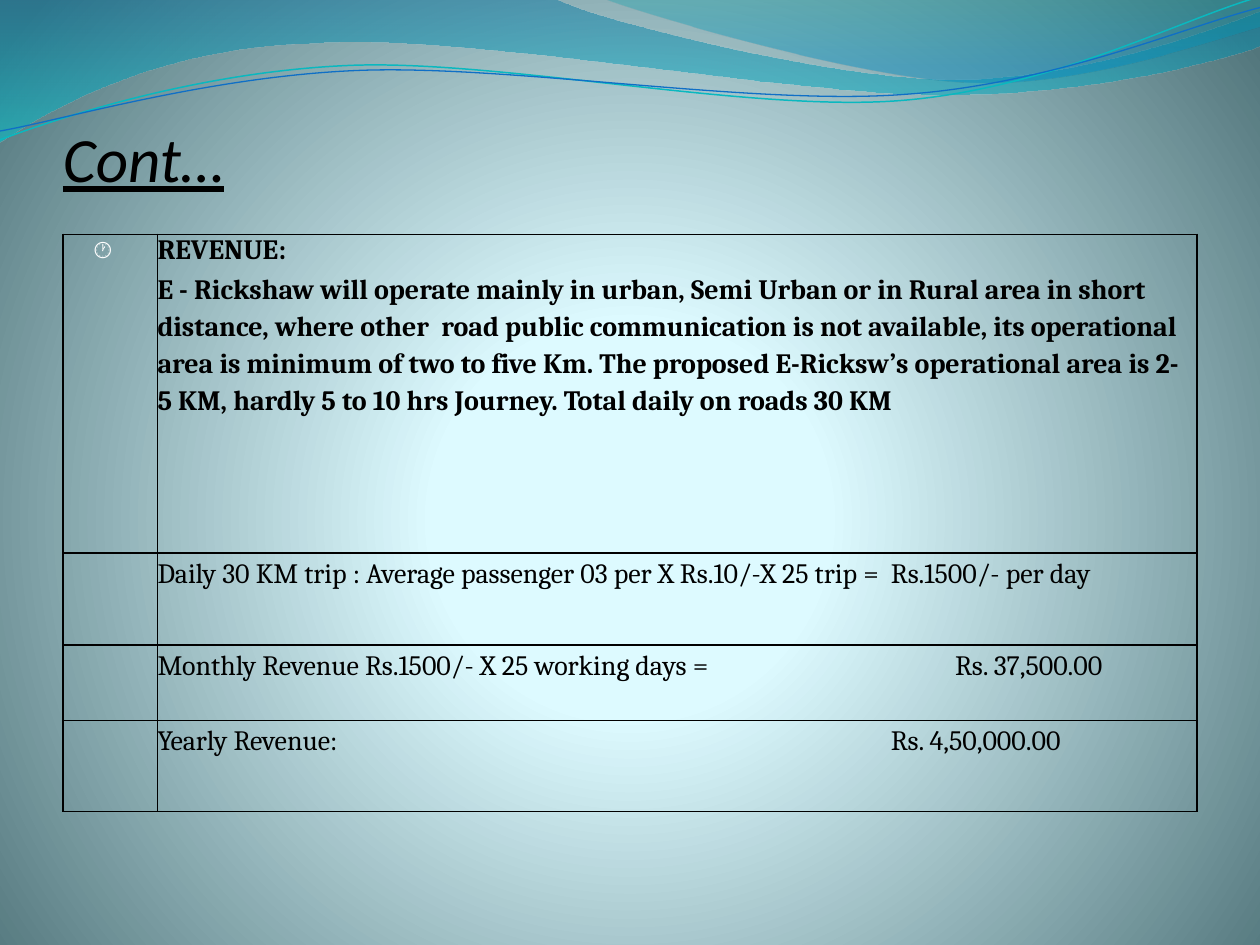
from lxml.etree import SubElement
from pptx import Presentation
from pptx.dml.color import RGBColor
from pptx.enum.text import MSO_ANCHOR as Anchor, PP_ALIGN as Align
from pptx.oxml.ns import qn
from pptx.util import Inches, Pt

WIDTH, HEIGHT = 10, 7.5

BACKGROUND_STOPS = [(0, "DEFBFF", 100), (25, "DDFAFF", 100), (100, "52767C", 100)]

# Each part of an outline is a point (2 numbers) or a cubic curve (6 numbers).
WAVES = [
    ([(0, 0), (4.4, -0.01), (4.76, 0.17, 6.64, 0.63, 7.58, 0.63),
      (8.53, 0.63, 9.58, 0.26, 10, 0.09), (10.01, 0.36),
      (9.83, 0.44, 8.7, 0.76, 7.46, 0.75), (6.22, 0.75, 3.82, 0.28, 2.57, 0.34),
      (1.29, 0.36, 0.46, 0.83, -0.01, 1.13), (0, 0)],
     [(0, "0074A1", 45), (100, "00C6CF", 55)]),
    ([(4.79, -0.01), (5.09, 0.11, 6.82, 0.62, 7.69, 0.65),
      (8.56, 0.69, 9.61, 0.32, 10, 0.21), (10, 0), (4.79, -0.01)],
     [(0, "00A1A9", 30), (80, "008BBF", 45)]),
]
WAVE_LINES = [
    ([(0, 1.11), (0.48, 0.93, 1.58, 0.57, 2.77, 0.52),
      (3.95, 0.47, 5.93, 0.89, 7.13, 0.8), (8.33, 0.71, 9.38, 0.15, 9.98, -0.02)],
     "0AB8BF", 0.85),
    ([(0, 1.04), (0.47, 0.96, 1.64, 0.61, 2.83, 0.56),
      (4.03, 0.51, 5.97, 0.84, 7.17, 0.75), (8.36, 0.67, 9.41, 0.21, 10, 0.06)],
     "0F6FC6", 0.75),
]

TITLE = "Cont…"
COLUMN_WIDTHS = [0.75, 8.25]
ROW_HEIGHTS = [2.53, 0.73, 0.6, 0.72]
MARKER = "🕐 "
REVENUE_HEADING = "REVENUE:"
REVENUE_TEXT = (
    "E - Rickshaw will operate mainly in urban, Semi Urban or in Rural area in short "
    "distance, where other  road public communication is not available, its operational "
    "area is minimum of two to five Km. The proposed E-Ricksw’s operational area is 2-5 KM, "
    "hardly 5 to 10 hrs Journey. Total daily on roads 30 KM")
# Text and the tab stop, in inches, of its amount
CALCULATIONS = [
    ("Daily 30 KM trip : Average passenger 03 per X Rs.10/-X 25 trip =  Rs.1500/- per day", None),
    ("Monthly Revenue Rs.1500/- X 25 working days =\tRs. 37,500.00", 6.33),
    ("Yearly Revenue:\tRs. 4,50,000.00", 5.82),
]


def color(value):
    return RGBColor.from_string(value)


def add_gradient(parent, stops):
    """Replace the stops of the gradient under parent and return its element."""
    gradient = parent.find(".//" + qn("a:gradFill"))
    gradient.clear()
    stop_list = SubElement(gradient, qn("a:gsLst"))
    for position, value, opacity in stops:
        stop = SubElement(stop_list, qn("a:gs"), pos=str(position * 1000))
        stop_color = SubElement(stop, qn("a:srgbClr"), val=value)
        if opacity < 100:
            SubElement(stop_color, qn("a:alpha"), val=str(opacity * 1000))
    return gradient


def add_outline(slide, parts, close):
    """Build the outline from its end points, then bend the curved segments."""
    start, *ends = [tuple(Inches(number) for number in part[-2:]) for part in parts]
    builder = slide.shapes.build_freeform(*start)
    builder.add_line_segments(ends, close=close)
    shape = builder.convert_to_shape()
    shape.shadow.inherit = False
    segments = list(shape.element.spPr.iter(qn("a:lnTo")))
    for segment, part in zip(segments, parts[1:]):
        if len(part) == 6:
            segment.tag = qn("a:cubicBezTo")
            for x, y in (part[2:4], part[:2]):
                control = segment.makeelement(
                    qn("a:pt"), x=str(Inches(x) - shape.left), y=str(Inches(y) - shape.top))
                segment.insert(0, control)
    return shape


def write(paragraph, text, size, font_name="Cambria", value="000000", bold=False,
          spacing=None, tab=None):
    paragraph.text = text
    if spacing:
        paragraph.line_spacing = spacing
    if tab:
        tabs = SubElement(paragraph._p.get_or_add_pPr(), qn("a:tabLst"))
        SubElement(tabs, qn("a:tab"), pos=str(Inches(tab)), algn="l")
    font = paragraph.font
    font.name, font.size, font.bold = font_name, Pt(size), bold
    font.color.rgb = color(value)


def style_cell(cell):
    cell.margin_left = cell.margin_top = cell.margin_bottom = 0
    cell.margin_right = Inches(0.08)
    properties = cell._tc.get_or_add_tcPr()
    for side in ("a:lnL", "a:lnR", "a:lnT", "a:lnB"):
        border = SubElement(properties, qn(side), w=str(Pt(1)))
        SubElement(SubElement(border, qn("a:solidFill")), qn("a:srgbClr"), val="000000")
    cell.fill.background()


def add_background(slide):
    slide.background.fill.gradient()
    gradient = add_gradient(slide.element, BACKGROUND_STOPS)
    circle = SubElement(gradient, qn("a:path"), path="circle")
    SubElement(circle, qn("a:fillToRect"), l="10000", t="110000", r="10000", b="100000")
    for parts, stops in WAVES:
        wave = add_outline(slide, parts, close=True)
        wave.line.fill.background()
        wave.fill.gradient()
        gradient = add_gradient(wave.element.spPr, stops)
        SubElement(gradient, qn("a:lin"), ang="5400000", scaled="1")
    for parts, value, width in WAVE_LINES:
        curve = add_outline(slide, parts, close=False)
        curve.fill.background()
        curve.line.color.rgb = color(value)
        curve.line.width = Pt(width)


def add_title(slide):
    box = slide.shapes.add_textbox(Inches(0.5), Inches(0.76), Inches(9), Inches(0.79))
    frame = box.text_frame
    frame.word_wrap = True
    frame.vertical_anchor = Anchor.BOTTOM
    frame.margin_left = frame.margin_right = frame.margin_bottom = 0
    paragraph = frame.paragraphs[0]
    write(paragraph, TITLE, 36, "Calibri")
    paragraph.font.italic = paragraph.font.underline = True


def add_revenue_table(slide):
    table = slide.shapes.add_table(
        len(ROW_HEIGHTS), len(COLUMN_WIDTHS), Inches(0.5), Inches(1.86),
        Inches(sum(COLUMN_WIDTHS)), Inches(sum(ROW_HEIGHTS))).table
    table.first_row = table.horz_banding = False
    for column, width in zip(table.columns, COLUMN_WIDTHS):
        column.width = Inches(width)
    for row, height in zip(table.rows, ROW_HEIGHTS):
        row.height = Inches(height)
    for cell in table.iter_cells():
        style_cell(cell)

    marker = table.cell(0, 0).text_frame.paragraphs[0]
    marker.alignment = Align.CENTER
    write(marker, MARKER, 12, value="FFFFFF", bold=True, spacing=1.15)
    frame = table.cell(0, 1).text_frame
    heading = frame.paragraphs[0]
    heading.space_after = Pt(1.7)
    write(heading, REVENUE_HEADING, 16, bold=True)
    write(frame.add_paragraph(), REVENUE_TEXT, 16, bold=True, spacing=1.15)
    for row, (text, tab) in enumerate(CALCULATIONS, start=1):
        write(table.cell(row, 1).text_frame.paragraphs[0], text, 16, spacing=1.15, tab=tab)


def main():
    presentation = Presentation()
    presentation.slide_width, presentation.slide_height = Inches(WIDTH), Inches(HEIGHT)
    slide = presentation.slides.add_slide(presentation.slide_layouts[6])
    add_background(slide)
    add_title(slide)
    add_revenue_table(slide)
    presentation.save("out.pptx")


if __name__ == "__main__":
    main()
